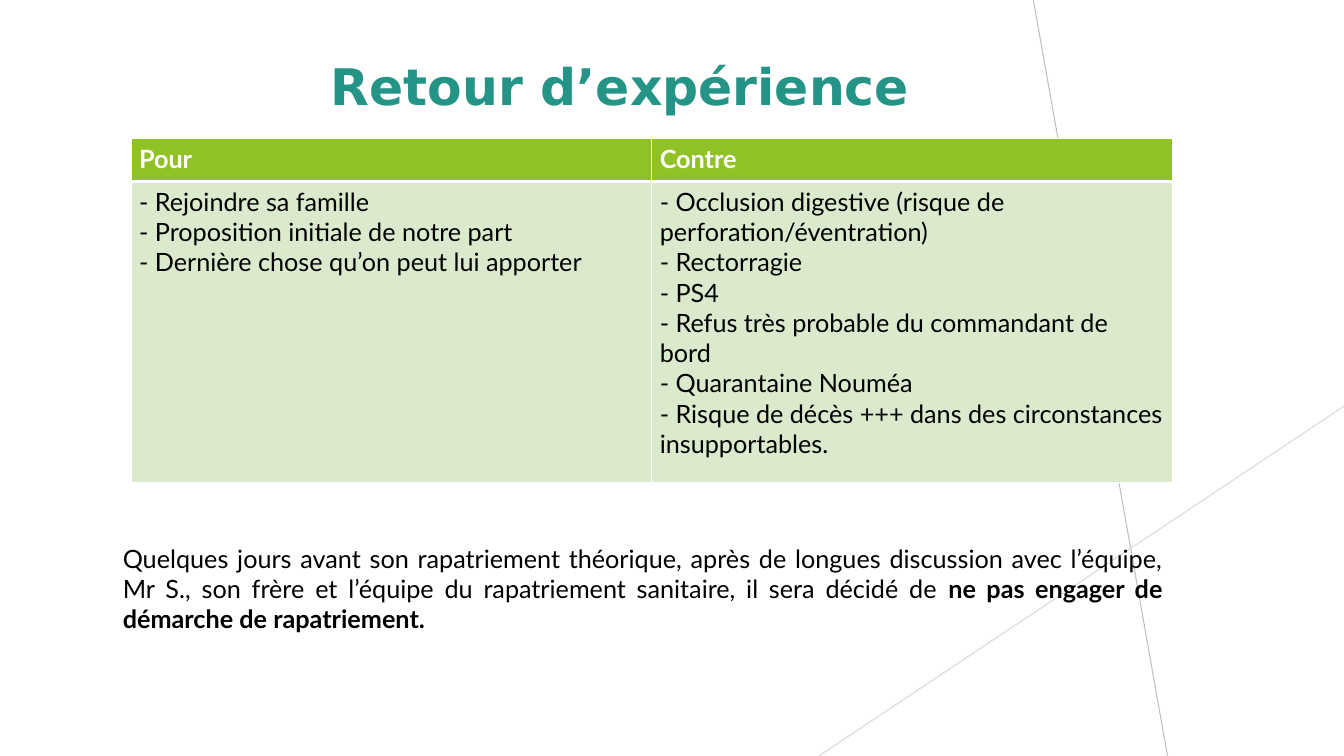
from lxml.etree import SubElement
from pptx import Presentation
from pptx.dml.color import RGBColor
from pptx.enum.shapes import MSO_CONNECTOR
from pptx.enum.text import MSO_ANCHOR, MSO_AUTO_SIZE, PP_ALIGN
from pptx.oxml import parse_xml
from pptx.oxml.ns import nsdecls, qn
from pptx.util import Inches, Pt

SLIDE_WIDTH = Inches(13.33)
SLIDE_HEIGHT = Inches(7.5)
TITLE_FONT = "DejaVu Sans"
BODY_FONT = "Lato"
TEAL = RGBColor(0x24, 0x94, 0x87)
GREEN = RGBColor(0x90, 0xC2, 0x26)
PALE_GREEN = RGBColor(0xDB, 0xE9, 0xCD)
WHITE = RGBColor(0xFF, 0xFF, 0xFF)
BLACK = RGBColor(0, 0, 0)
GREY = RGBColor(0xBF, 0xBF, 0xBF)
LIGHT_GREY = RGBColor(0xD9, 0xD9, 0xD9)

PROS = [
    "- Rejoindre sa famille",
    "- Proposition initiale de notre part",
    "- Dernière chose qu’on peut lui apporter",
]
CONS = [
    "- Occlusion digestive (risque de perforation/éventration)",
    "- Rectorragie",
    "- PS4\v- Refus très probable du commandant de bord",
    "- Quarantaine Nouméa",
    "- Risque de décès +++ dans des circonstances insupportables.",
]
DECISION = (
    "Quelques jours avant son rapatriement théorique, après de longues discussion "
    "avec l’équipe, Mr S., son frère et l’équipe du rapatriement sanitaire, "
    "il sera décidé de "
)
DECISION_STRESSED = "ne pas engager de démarche de rapatriement."


def across(percent):
    return round(SLIDE_WIDTH * percent / 100)


def down(percent):
    return round(SLIDE_HEIGHT * percent / 100)


def area(left, top, width, height):
    return across(left), down(top), across(width), down(height)


def set_font(paragraph, name, size, color, bold=False):
    font = paragraph.font
    font.name = name
    font.size = Pt(size)
    font.bold = bold
    font.color.rgb = color


def add_background_line(slide, start, end, color):
    connector = slide.shapes.add_connector(
        MSO_CONNECTOR.STRAIGHT,
        across(start[0]), down(start[1]), across(end[0]), down(end[1]),
    )
    connector.line.color.rgb = color
    connector.line.width = Pt(0.75)
    SubElement(connector.element.spPr, qn("a:effectLst"))


def set_title(slide, text):
    title = slide.shapes.title
    title.left, title.top, title.width, title.height = area(23.86, 6.13, 70.52, 10.27)
    frame = title.text_frame
    frame.text = text
    frame.auto_size = MSO_AUTO_SIZE.NONE
    frame.vertical_anchor = MSO_ANCHOR.MIDDLE
    paragraph = frame.paragraphs[0]
    paragraph.alignment = PP_ALIGN.LEFT
    set_font(paragraph, TITLE_FONT, 36, TEAL, True)


def set_borders(cell, top, bottom):
    properties = cell._tc.get_or_add_tcPr()
    widths = {"lnL": 1, "lnR": 1, "lnT": top, "lnB": bottom}
    for position, (side, width) in enumerate(widths.items()):
        properties.insert(position, parse_xml(
            f'<a:{side} {nsdecls("a")} w="{Pt(width)}"><a:solidFill>'
            f'<a:srgbClr val="{WHITE}"/></a:solidFill></a:{side}>'
        ))


def fill_cell(cell, lines, is_header):
    cell.fill.solid()
    cell.fill.fore_color.rgb = GREEN if is_header else PALE_GREEN
    cell.margin_left = cell.margin_right = Inches(0.08)
    cell.margin_top = cell.margin_bottom = Inches(0.05)
    cell.text_frame.text = "\n".join(lines)
    for paragraph in cell.text_frame.paragraphs:
        set_font(paragraph, BODY_FONT, 18, WHITE if is_header else BLACK, is_header)
    set_borders(cell, top=1 if is_header else 3, bottom=3 if is_header else 1)


def add_arguments_table(slide, columns):
    table = slide.shapes.add_table(
        2, len(columns), *area(9.75, 18.27, 77.49, 45.6)
    ).table
    table.horz_banding = False
    table.rows[0].height = down(5.73)
    table.rows[1].height = down(39.87)
    for index, (heading, arguments) in enumerate(columns):
        fill_cell(table.cell(0, index), [heading], True)
        fill_cell(table.cell(1, index), arguments, False)


def add_decision(slide, text, stressed):
    frame = slide.shapes.add_textbox(*area(8.4, 71.2, 78.84, 13.47)).text_frame
    frame.word_wrap = True
    frame.auto_size = MSO_AUTO_SIZE.SHAPE_TO_FIT_TEXT
    paragraph = frame.paragraphs[0]
    paragraph.alignment = PP_ALIGN.JUSTIFY
    set_font(paragraph, BODY_FONT, 18, BLACK)
    paragraph.add_run().text = text
    stressed_run = paragraph.add_run()
    stressed_run.text = stressed
    stressed_run.font.bold = True


def main():
    presentation = Presentation()
    presentation.slide_width = SLIDE_WIDTH
    presentation.slide_height = SLIDE_HEIGHT
    slide = presentation.slides.add_slide(
        presentation.slide_layouts.get_by_name("Title Only")
    )
    add_background_line(slide, (76.89, 0), (86.87, 100), GREY)
    add_background_line(slide, (100, 53.73), (60.92, 100), LIGHT_GREY)
    set_title(slide, "Retour d’expérience")
    add_arguments_table(slide, [("Pour", PROS), ("Contre", CONS)])
    add_decision(slide, DECISION, DECISION_STRESSED)
    presentation.save("out.pptx")


if __name__ == "__main__":
    main()
